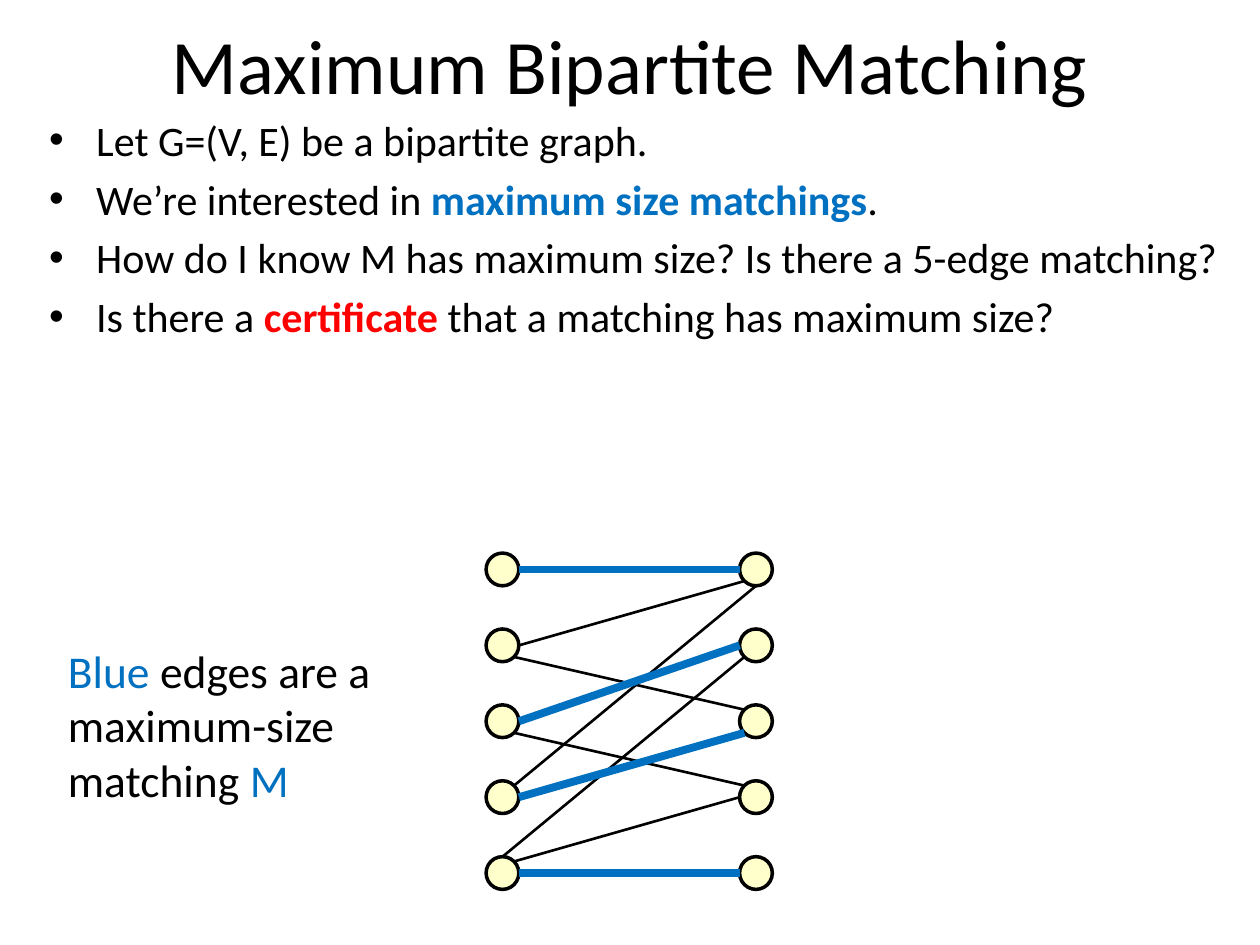
import math

from lxml import etree
from pptx import Presentation
from pptx.dml.color import RGBColor
from pptx.enum import shapes, text
from pptx.oxml.ns import qn
from pptx.util import Cm, Pt

BLACK, BLUE, RED, CREAM = "000000", "0070C0", "FF0000", "FFFFCC"
SITE_ANGLES = {"right": 0, "lower right": 45, "bottom": 90, "lower left": 135,
               "left": 180, "upper left": 225, "top": 270, "upper right": 315}
EDGES = [
    (4, "upper right", 1, "bottom", False),
    (2, "lower right", 3, "upper left", False),
    (5, "right", 5, "left", True),
    (5, "upper right", 4, "left", False),
    (1, "right", 1, "left", True),
    (2, "right", 1, "lower left", False),
    (5, "top", 2, "lower left", False),
    (3, "right", 2, "left", True),
    (3, "lower right", 4, "upper left", False),
    (4, "right", 3, "lower left", True),
]


def paint(color_format, color):
    color_format.rgb = RGBColor.from_string(color)


def add_frame(slide, left, top, width, height):
    frame = slide.shapes.add_textbox(Cm(left), Cm(top), Cm(width), Cm(height)).text_frame
    frame.word_wrap = True
    return frame


def write_runs(paragraph, size, pieces):
    for words, color, bold in pieces:
        run = paragraph.add_run()
        run.text = words
        run.font.name = "Calibri"
        run.font.size = Pt(size)
        run.font.bold = bold
        paint(run.font.color, color)


def add_title(slide, left, top, width, height):
    frame = add_frame(slide, left, top, width, height)
    frame.vertical_anchor = text.MSO_ANCHOR.MIDDLE
    heading = frame.paragraphs[0]
    heading.alignment = text.PP_ALIGN.CENTER
    write_runs(heading, 44, [("Maximum Bipartite Matching", BLACK, False)])


def add_bullets(slide, left, top, width, height, points):
    frame = add_frame(slide, left, top, width, height)
    for index, pieces in enumerate(points):
        point = frame.add_paragraph() if index else frame.paragraphs[0]
        point.space_before = Pt(4.8)
        properties = point._p.get_or_add_pPr()
        properties.set("marL", str(Cm(0.95)))
        properties.set("indent", str(-Cm(0.95)))
        etree.SubElement(properties, qn("a:buFont")).set("typeface", "Arial")
        etree.SubElement(properties, qn("a:buChar")).set("char", "•")
        write_runs(point, 24, pieces)


def add_caption(slide, left, top, width, height):
    frame = add_frame(slide, left, top, width, height)
    frame.auto_size = text.MSO_AUTO_SIZE.SHAPE_TO_FIT_TEXT
    write_runs(frame.paragraphs[0], 26, [
        ("Blue ", BLUE, False),
        ("edges are a maximum-size matching ", BLACK, False),
        ("M", BLUE, False),
    ])


def add_vertex(slide, left, top, diameter):
    vertex = slide.shapes.add_shape(
        shapes.MSO_SHAPE.OVAL, Cm(left), Cm(top), Cm(diameter), Cm(diameter))
    vertex.shadow.inherit = False
    vertex.fill.solid()
    paint(vertex.fill.fore_color, CREAM)
    paint(vertex.line.color, BLACK)
    vertex.line.width = Pt(2)
    return vertex


def site_point(vertex, site):
    angle = math.radians(SITE_ANGLES[site])
    radius = vertex.width / 2
    return (round(vertex.left + radius * (1 + math.cos(angle))),
            round(vertex.top + radius * (1 + math.sin(angle))))


def add_edge(slide, start, end, matched):
    edge = slide.shapes.add_connector(shapes.MSO_CONNECTOR.STRAIGHT, *start, *end)
    paint(edge.line.color, BLUE if matched else BLACK)
    edge.line.width = Pt(4.5 if matched else 1.5)
    etree.SubElement(edge._element.spPr, qn("a:effectLst"))


def add_graph(slide, left, top, width, height):
    diameter, rows = 0.66, 5
    step = (height - diameter) / (rows - 1)
    left_side, right_side = [
        [add_vertex(slide, x, top + row * step, diameter) for row in range(rows)]
        for x in (left, left + width - diameter)
    ]
    for source, source_site, target, target_site, matched in EDGES:
        add_edge(slide, site_point(left_side[source - 1], source_site),
                 site_point(right_side[target - 1], target_site), matched)


def main():
    deck = Presentation()
    deck.slide_width, deck.slide_height = Cm(25.4), Cm(19.05)
    slide = deck.slides.add_slide(deck.slide_layouts[6])
    add_title(slide, 1.27, 0, 22.86, 2.57)
    add_bullets(slide, 0.74, 2.18, 24.16, 5.82, [
        [("Let G=(V, E) be a bipartite graph.", BLACK, False)],
        [("We’re interested in ", BLACK, False),
         ("maximum size matchings", BLUE, True), (".", BLACK, False)],
        [("How do I know M has maximum size? Is there a 5-edge matching?", BLACK, False)],
        [("Is there a ", BLACK, False), ("certificate", RED, True),
         (" that a matching has maximum size?", BLACK, False)],
    ])
    add_graph(slide, 9.8, 11.15, 5.77, 6.78)
    add_caption(slide, 1.12, 12.83, 7.9, 3.58)
    deck.save("out.pptx")


if __name__ == "__main__":
    main()
